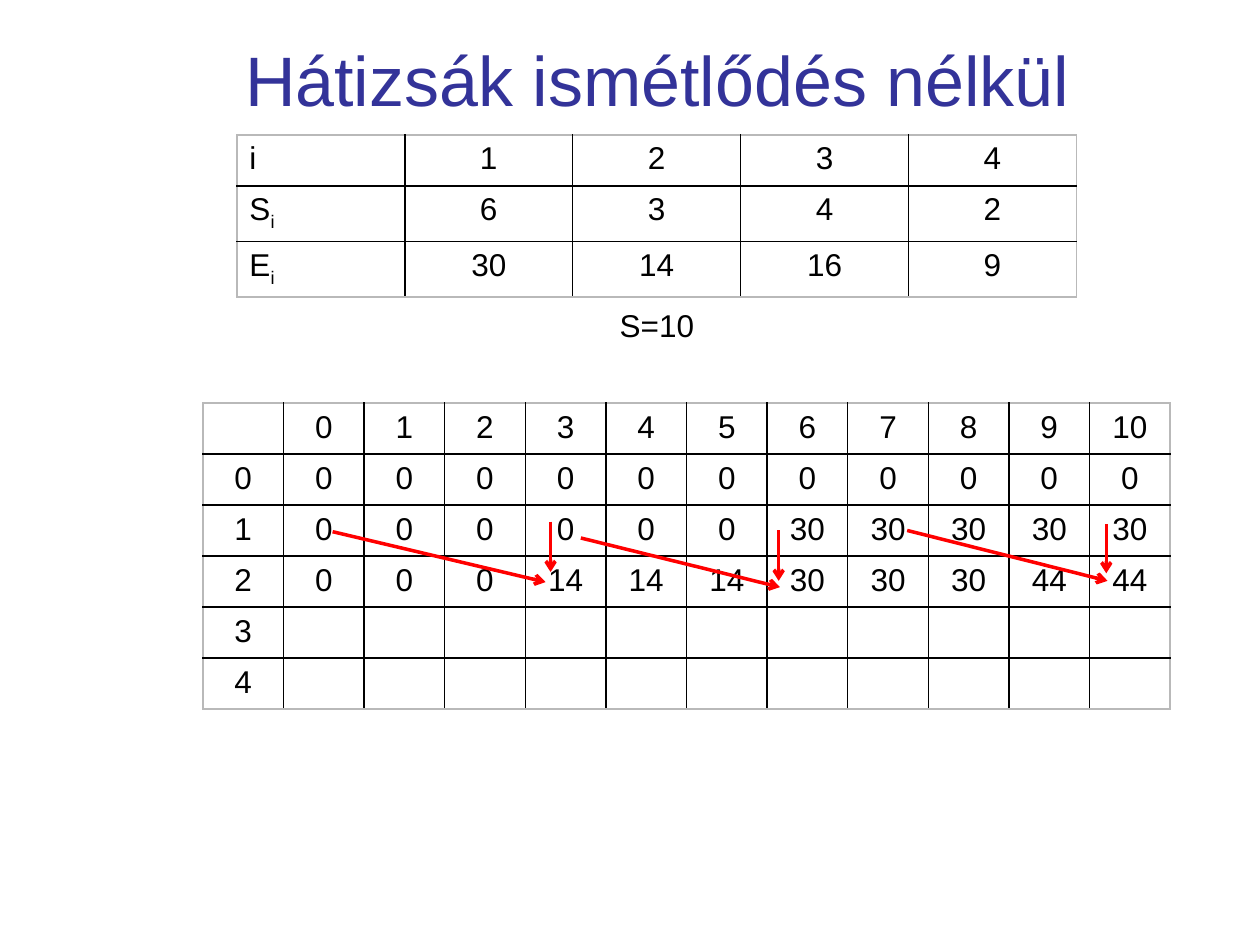
"""Build a slide on the knapsack problem without repetition."""
from dataclasses import dataclass
from typing import NamedTuple

from lxml.etree import SubElement
from pptx import Presentation
from pptx.dml.color import RGBColor as RGB
from pptx.enum.shapes import MSO_CONNECTOR as Connector
from pptx.enum.text import MSO_ANCHOR as Anchor, MSO_AUTO_SIZE as AutoSize, PP_ALIGN as Align
from pptx.oxml.ns import qn
from pptx.slide import Slide
from pptx.util import Inches, Pt


@dataclass(frozen=True)
class Theme:
    font: str = "Arial"
    title: RGB = RGB(0x33, 0x33, 0x99)
    ink: RGB = RGB(0, 0, 0)
    arrow: RGB = RGB(0xFF, 0, 0)
    grid: str = "000000"
    frame: str = "B9B9B9"
    title_size: int = 40
    body_size: int = 18
    arrow_width: int = 2
    border_width: int = 1


class Label(NamedTuple):
    text: str
    left: float
    top: float
    width: float
    height: float
    size: int
    color: RGB
    wrap: bool


class Grid(NamedTuple):
    left: float
    top: float
    col_width: float
    rows: list[list[str]]
    first_align: Align


class Arrow(NamedTuple):
    x1: float
    y1: float
    x2: float
    y2: float


THEME = Theme()
ROW_HEIGHT = 0.405

LABELS = [
    Label("Hátizsák ismétlődés nélkül", 0.67, 0, 9.09, 1.25, THEME.title_size, THEME.title, True),
    Label("S=10", 4.82, 2.38, 0.8, 0.4, THEME.body_size, THEME.ink, False),
]
ITEMS = Grid(1.88, 1.07, 1.333, [
    ["i", "1", "2", "3", "4"],
    ["S_i", "6", "3", "4", "2"],
    ["E_i", "30", "14", "16", "9"],
], Align.LEFT)
VALUES = Grid(1.61, 3.2, 0.64, [
    ["", *map(str, range(11))],
    ["0"] + ["0"] * 11,
    ["1"] + ["0"] * 6 + ["30"] * 5,
    ["2"] + ["0"] * 3 + ["14"] * 3 + ["30"] * 3 + ["44"] * 2,
    ["3"] + [""] * 11,
    ["4"] + [""] * 11,
], Align.CENTER)
ARROWS = [
    Arrow(4.37, 4.14, 4.37, 4.54),
    Arrow(2.64, 4.22, 4.33, 4.62),
    Arrow(6.18, 4.21, 6.18, 4.61),
    Arrow(4.61, 4.27, 6.19, 4.66),
    Arrow(8.78, 4.16, 8.78, 4.55),
    Arrow(7.2, 4.21, 8.79, 4.61),
]


def style_font(font, size: int, color: RGB) -> None:
    font.name = THEME.font
    font.size = Pt(size)
    font.color.rgb = color


def add_label(s: Slide, label: Label) -> None:
    box = s.shapes.add_textbox(*map(Inches, label[1:5]))
    tf = box.text_frame
    tf.word_wrap = label.wrap
    tf.text = label.text
    p = tf.paragraphs[0]
    if label.wrap:
        tf.vertical_anchor = Anchor.MIDDLE
        p.alignment = Align.CENTER
    else:
        tf.auto_size = AutoSize.SHAPE_TO_FIT_TEXT
    style_font(p.runs[0].font, label.size, label.color)


def add_borders(cell, outer: dict[str, bool]) -> None:
    tc_pr = cell._tc.get_or_add_tcPr()
    for side, is_outer in outer.items():
        ln = SubElement(tc_pr, qn(f"a:ln{side}"), w=str(Pt(THEME.border_width)))
        fill = SubElement(ln, qn("a:solidFill"))
        SubElement(fill, qn("a:srgbClr"), val=THEME.frame if is_outer else THEME.grid)


def fill_cell(cell, text: str, align: Align) -> None:
    p = cell.text_frame.paragraphs[0]
    p.alignment = align
    style_font(p.font, THEME.body_size, THEME.ink)
    base, _, subscript = text.partition("_")
    for part in filter(None, (base, subscript)):
        r = p.add_run()
        r.text = part
        style_font(r.font, THEME.body_size, THEME.ink)
    if subscript:
        r._r.get_or_add_rPr().set("baseline", "-25000")


def add_grid(s: Slide, grid: Grid) -> None:
    n_rows, n_cols = len(grid.rows), len(grid.rows[0])
    size = (grid.col_width * n_cols, ROW_HEIGHT * n_rows)
    table = s.shapes.add_table(n_rows, n_cols, *map(Inches, (grid.left, grid.top, *size))).table
    table.first_row = table.horz_banding = False
    for i, row in enumerate(grid.rows):
        for j, text in enumerate(row):
            cell = table.cell(i, j)
            fill_cell(cell, text, Align.CENTER if j else grid.first_align)
            add_borders(cell, {"L": j == 0, "R": j == n_cols - 1,
                               "T": i == 0, "B": i == n_rows - 1})
            cell.fill.background()


def add_arrow(s: Slide, arrow: Arrow) -> None:
    line = s.shapes.add_connector(Connector.STRAIGHT, *map(Inches, arrow))
    line.line.color.rgb = THEME.arrow
    line.line.width = Pt(THEME.arrow_width)
    SubElement(line.line._get_or_add_ln(), qn("a:tailEnd"), type="arrow")
    SubElement(line._element.spPr, qn("a:effectLst"))


def main() -> None:
    prs = Presentation()
    prs.slide_width, prs.slide_height = Inches(10), Inches(7.5)
    s = prs.slides.add_slide(prs.slide_layouts[6])
    title, capacity = LABELS
    add_label(s, title)
    add_grid(s, ITEMS)
    add_label(s, capacity)
    add_grid(s, VALUES)
    for arrow in ARROWS:
        add_arrow(s, arrow)
    prs.save("out.pptx")


if __name__ == "__main__":
    main()
